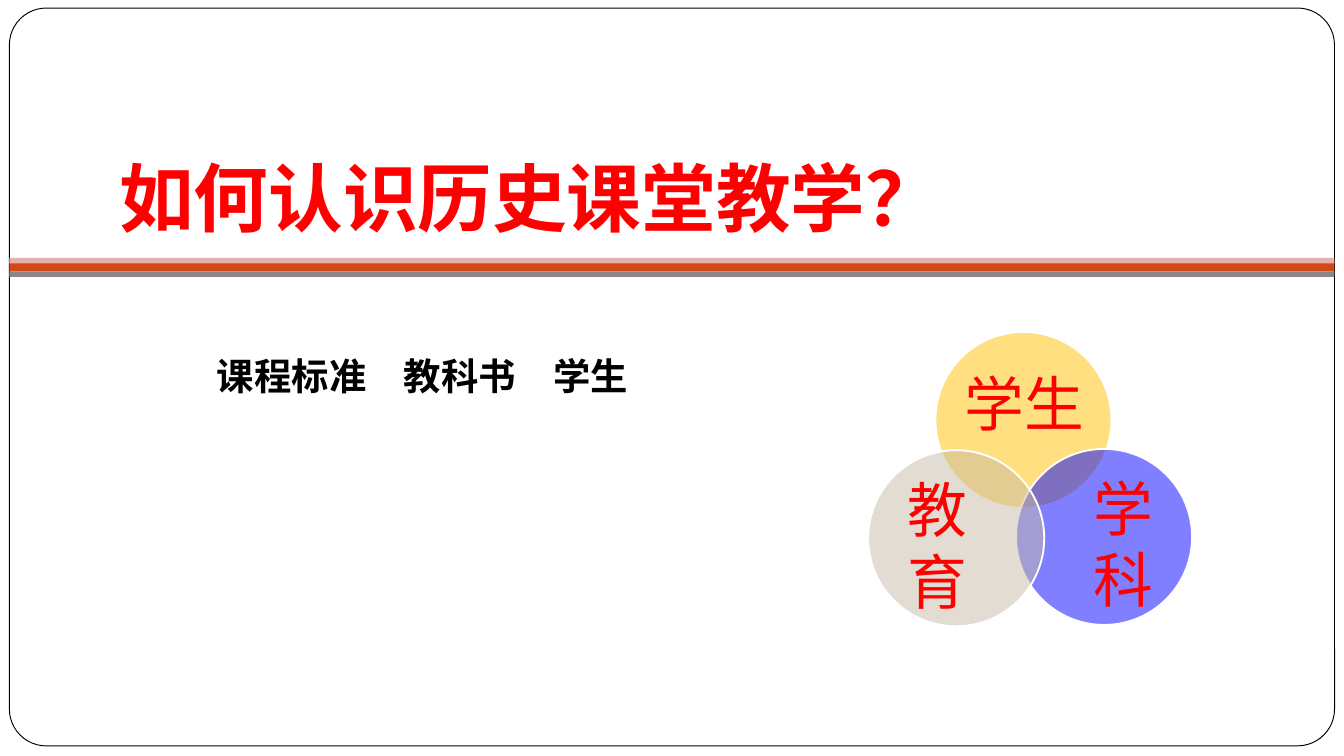
from dataclasses import dataclass

from lxml import etree
from pptx import Presentation
from pptx.dml.color import RGBColor
from pptx.enum import shapes, text
from pptx.oxml.ns import qn
from pptx.util import Inches, Pt

HUES = {
    "white": "FFFFFF", "black": "000000", "red": "FF0000",
    "rust": "D34817", "pink": "E6B1AC", "gray": "918485",
    "gold": "FFC000", "blue": "0000FF", "sand": "C7BBA6",
}
SANS = "Noto Sans CJK SC"
WIDE = 10
TALL = WIDE * 9 / 16
EDGE, SPAN = 0.07, 9.86  # left and width shared by the frame and the bands
SIZE = 1.31  # diameter of each circle


@dataclass
class Box:
    left: float
    top: float
    width: float
    height: float

    def emu(self) -> list:
        return [Inches(n) for n in (self.left, self.top, self.width, self.height)]


@dataclass
class Band:
    top: float
    height: float
    hue: str


@dataclass
class Ring:
    left: float
    top: float
    hue: str
    word: str
    label: Box


BANDS = [
    Band(1.95, 0.07, "rust"),
    Band(1.92, 0.04, "pink"),
    Band(2.02, 0.04, "gray"),
]
RINGS = [
    Ring(6.96, 2.47, "gold", "学生", Box(7.14, 2.7, 0.96, 0.59)),
    Ring(7.56, 3.34, "blue", "学科", Box(7.96, 3.68, 0.79, 0.72)),
    Ring(6.46, 3.35, "sand", "教育", Box(6.58, 3.69, 0.79, 0.72)),
]


def color(hue: str) -> RGBColor:
    return RGBColor.from_string(HUES[hue])


def draw(slide, kind, box: Box, hue: str, edge: str = "", width: float = 1,
         alpha: int = 100):
    """Add a filled preset shape; alpha is its opacity in percent."""
    shape = slide.shapes.add_shape(kind, *box.emu())
    shape.shadow.inherit = False
    shape.fill.solid()
    shape.fill.fore_color.rgb = color(hue)
    if alpha < 100:
        tint = shape.fill._xPr.find(qn("a:solidFill"))[0]
        etree.SubElement(tint, qn("a:alpha")).set("val", str(alpha * 1000))
    if edge:
        shape.line.color.rgb = color(edge)
        shape.line.width = Pt(width)
    else:
        shape.line.fill.background()
    return shape


def write(slide, words: str, box: Box, size: float, hue: str = "red",
          font: str = SANS, bold: bool = False,
          align=text.PP_ALIGN.CENTER, anchor=text.MSO_ANCHOR.MIDDLE,
          inset: tuple = (0, 0, 0, 0), before: float = 0) -> None:
    """Add wrapped text; inset is left, top, right, bottom in inches."""
    frame = slide.shapes.add_textbox(*box.emu()).text_frame
    frame.word_wrap = True
    frame.vertical_anchor = anchor
    (frame.margin_left, frame.margin_top,
     frame.margin_right, frame.margin_bottom) = map(Inches, inset)
    para = frame.paragraphs[0]
    para.alignment = align
    para.space_before = Pt(before)
    run = para.add_run()
    run.text = words
    run.font.name = font
    run.font.size = Pt(size)
    run.font.bold = bold
    run.font.color.rgb = color(hue)
    east = etree.SubElement(run.font._element, qn("a:ea"))
    east.set("typeface", SANS if font == "Lato" else font)


def main() -> None:
    deck = Presentation()
    deck.slide_width, deck.slide_height = Inches(WIDE), Inches(TALL)
    slide = deck.slides.add_slide(deck.slide_layouts[6])
    kinds = shapes.MSO_SHAPE

    frame = draw(slide, kinds.ROUNDED_RECTANGLE, Box(EDGE, 0.06, SPAN, 5.49),
                 "white", edge="black", width=0.5)
    frame.adjustments[0] = 0.05
    for band in BANDS:
        draw(slide, kinds.RECTANGLE, Box(EDGE, band.top, SPAN, band.height),
             band.hue)

    write(slide, "如何认识历史课堂教学？", Box(0.79, 0.78, 8.5, 1.12), 40,
          font="Lato", bold=True, align=text.PP_ALIGN.LEFT,
          anchor=text.MSO_ANCHOR.BOTTOM, inset=(0.1, 0.05, 0.1, 0.1))
    write(slide, "课程标准　教科书　学生", Box(0.79, 2.58, 4.71, 0.61), 20,
          hue="black", bold=True, anchor=text.MSO_ANCHOR.TOP,
          inset=(0.1, 0.05, 0.1, 0.05), before=5.8)

    for ring in RINGS:
        draw(slide, kinds.OVAL, Box(ring.left, ring.top, SIZE, SIZE), ring.hue,
             edge="white", alpha=50)
        write(slide, ring.word, ring.label, 32, font="Noto Sans CJK JP")

    deck.save("out.pptx")


if __name__ == "__main__":
    main()
